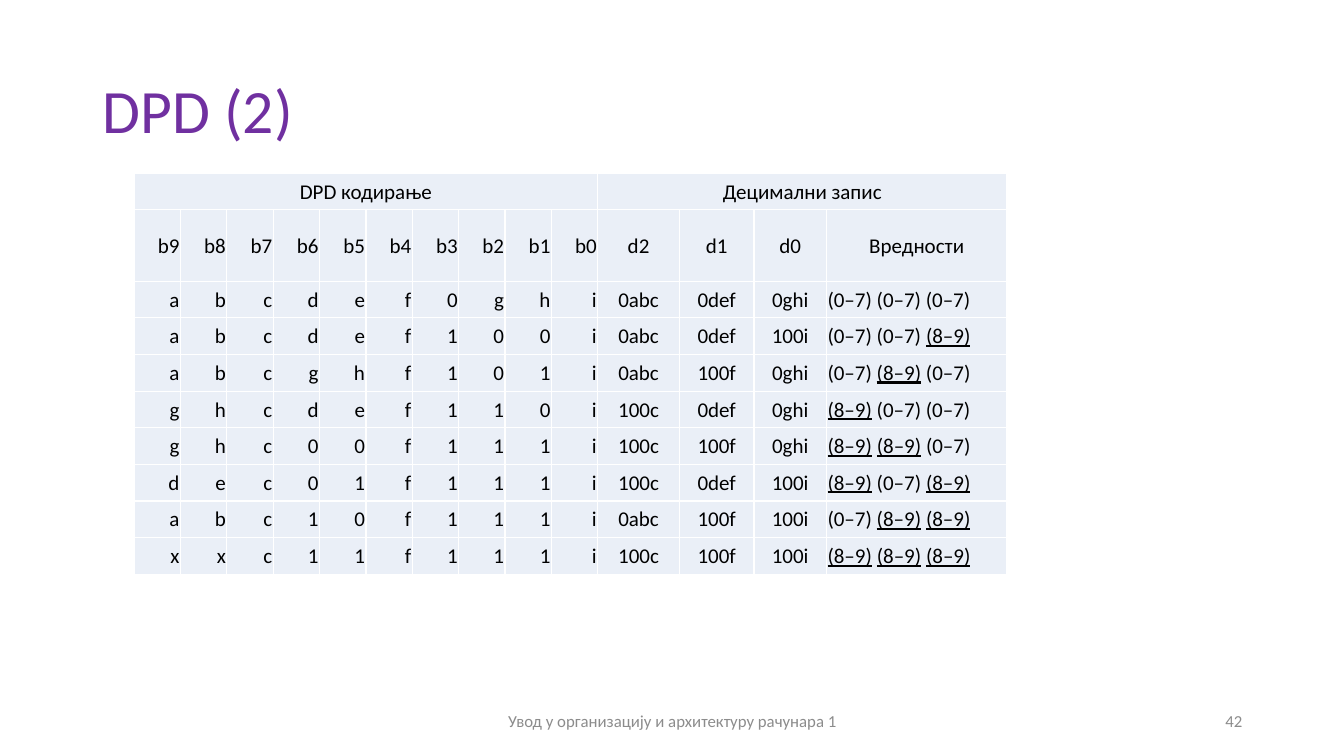
from lxml.etree import SubElement, fromstring
from pptx import Presentation
from pptx.dml.color import RGBColor
from pptx.enum.text import MSO_ANCHOR, PP_ALIGN
from pptx.oxml.ns import qn
from pptx.util import Inches, Pt

WIDTH, HEIGHT = 13.33, 7.5
FONT = "Calibri"
TITLE = "DPD (2)"
FOOTER = "Увод у организацију и архитектуру рачунара 1"
NUMBER = "42"
GROUPS = [("DPD кодирање", 0, 9), ("Децимални запис", 10, 13)]
HEADINGS = "b9 b8 b7 b6 b5 b4 b3 b2 b1 b0 d2 d1 d0 Вредности".split()
CODES = [
    ("abcdef0ghi", "0abc", "0def", "0ghi"),
    ("abcdef100i", "0abc", "0def", "100i"),
    ("abcghf101i", "0abc", "100f", "0ghi"),
    ("ghcdef110i", "100c", "0def", "0ghi"),
    ("ghc00f111i", "100c", "100f", "0ghi"),
    ("dec01f111i", "100c", "0def", "100i"),
    ("abc10f111i", "0abc", "100f", "100i"),
    ("xxc11f111i", "100c", "100f", "100i"),
]
RANGES = {"0": "(0–7)", "1": "(8–9)"}
BITS = 10
COLUMNS = [0.46] * BITS + [0.81, 0.74, 0.72, 1.79]
TABLE_LEFT, TABLE_TOP, TABLE_HEIGHT = 1.33, 1.72, 3.98
HEADER_ROWS = [0.36, 0.71]
ROWS = HEADER_ROWS + [(TABLE_HEIGHT - sum(HEADER_ROWS)) / len(CODES)] * len(CODES)
SHADOW = (
    '<a:effectLst xmlns:a="http://schemas.openxmlformats.org/drawingml/2006/main">'
    '<a:outerShdw blurRad="50800" dist="38100" dir="8100000" algn="tr">'
    '<a:srgbClr val="000000"><a:alpha val="40000"/></a:srgbClr>'
    "</a:outerShdw></a:effectLst>"
)


def color(value):
    return RGBColor.from_string(value)


def apply(target, values):
    for name, value in values.items():
        setattr(target, name, value)


def add_span(para, text, size, ink, underline=False):
    span = para.add_run()
    span.text = text
    apply(span.font, {"name": FONT, "size": Pt(size), "underline": underline or None})
    span.font.color.rgb = color(ink)
    return span


def add_text(page, place, text, size, ink, align):
    box = page.shapes.add_textbox(*map(Inches, place))
    apply(box.text_frame, {"word_wrap": True, "vertical_anchor": MSO_ANCHOR.MIDDLE})
    para = box.text_frame.paragraphs[0]
    para.alignment = align
    return para, add_span(para, text, size, ink)


def style_cell(cell):
    properties = cell._tc.get_or_add_tcPr()
    for side in ("lnL", "lnR", "lnT", "lnB"):
        line = SubElement(properties, qn("a:" + side), w=str(Pt(1)))
        SubElement(SubElement(line, qn("a:solidFill")), qn("a:srgbClr"), val="FFFFFF")
    cell.fill.solid()
    cell.fill.fore_color.rgb = color("EAEFF7")
    apply(cell, {
        "margin_left": Inches(0.01), "margin_right": Inches(0.01),
        "margin_top": Inches(0.01), "margin_bottom": 0,
        "vertical_anchor": MSO_ANCHOR.MIDDLE,
    })


def write_cell(cell, text, align):
    para = cell.text_frame.paragraphs[0]
    para.alignment = align
    add_span(para, text, 15, "000000")


def write_ranges(cell, digits):
    para = cell.text_frame.paragraphs[0]
    para.alignment = PP_ALIGN.LEFT
    for index, digit in enumerate(digits):
        if index:
            add_span(para, " ", 15, "000000")
        add_span(para, RANGES[digit[0]], 15, "000000", digit[0] == "1")


def add_code_table(page):
    place = (TABLE_LEFT, TABLE_TOP, sum(COLUMNS), TABLE_HEIGHT)
    table = page.shapes.add_table(len(ROWS), len(COLUMNS), *map(Inches, place)).table
    apply(table, {"first_row": False, "horz_banding": False})
    for column, width in zip(table.columns, COLUMNS):
        column.width = Inches(width)
    for row, height in zip(table.rows, ROWS):
        row.height = Inches(height)
    for cell in table.iter_cells():
        style_cell(cell)
    for label, first, last in GROUPS:
        table.cell(0, first).merge(table.cell(0, last))
        write_cell(table.cell(0, first), label, PP_ALIGN.CENTER)
    lines = [HEADINGS] + [[*bits, *digits] for bits, *digits in CODES]
    for row, line in enumerate(lines, 1):
        for column, text in enumerate(line):
            align = PP_ALIGN.RIGHT if column < BITS else PP_ALIGN.CENTER
            write_cell(table.cell(row, column), text, align)
    for row, (bits, *digits) in enumerate(CODES, 2):
        write_ranges(table.cell(row, len(COLUMNS) - 1), digits)


def main():
    deck = Presentation()
    apply(deck, {"slide_width": Inches(WIDTH), "slide_height": Inches(HEIGHT)})
    page = deck.slides.add_slide(deck.slide_layouts[6])
    para, span = add_text(
        page, (0.92, 0.4, 11.5, 1.45), TITLE, 44, "7030A0", PP_ALIGN.LEFT)
    para.line_spacing = 0.9
    span.font._rPr.find(qn("a:solidFill")).addnext(fromstring(SHADOW))
    add_code_table(page)
    add_text(page, (4.42, 6.95, 4.5, 0.4), FOOTER, 12, "8C8C8C", PP_ALIGN.CENTER)
    add_text(page, (9.42, 6.95, 3, 0.4), NUMBER, 12, "8C8C8C", PP_ALIGN.RIGHT)
    deck.save("out.pptx")


if __name__ == "__main__":
    main()
